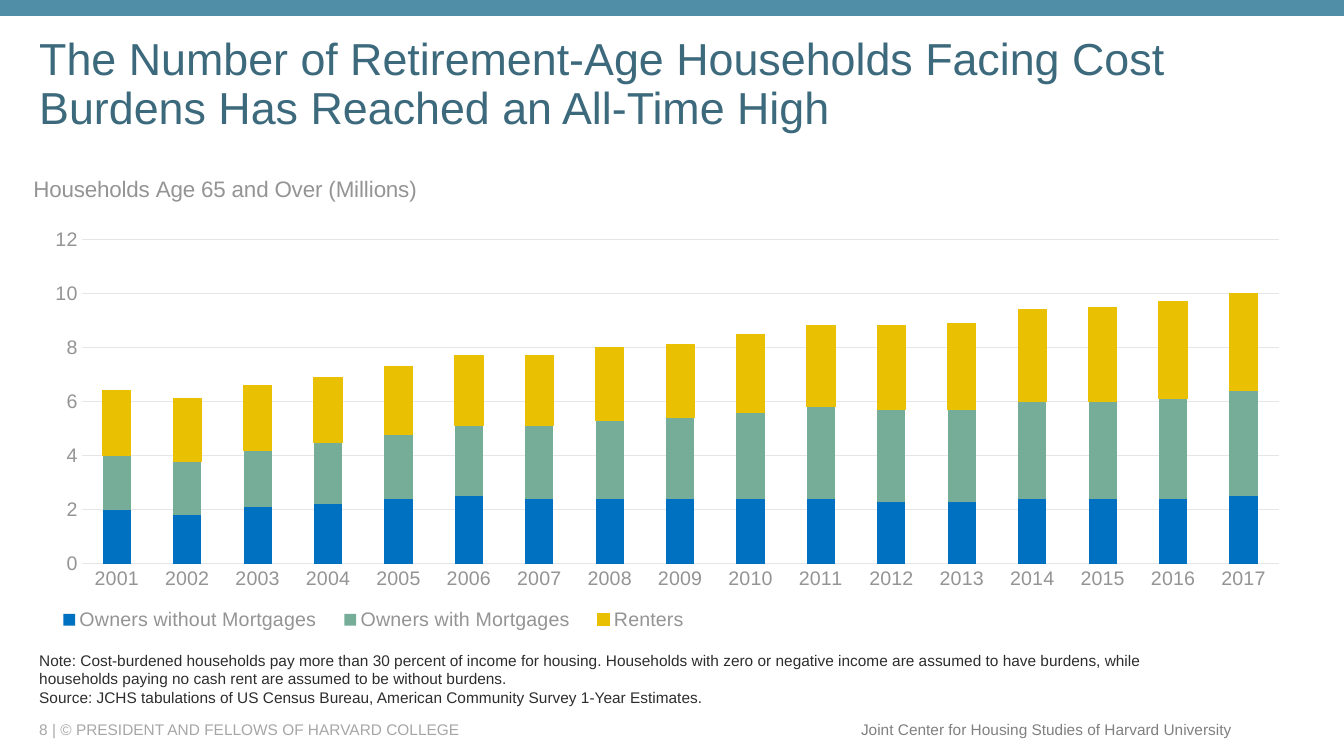
from lxml import etree
from pptx import Presentation
from pptx.chart.data import CategoryChartData
from pptx.dml.color import RGBColor
from pptx.enum.chart import XL_CHART_TYPE as ChartType, XL_LEGEND_POSITION as LegendPosition
from pptx.enum.chart import XL_TICK_MARK as TickMark
from pptx.enum.shapes import MSO_SHAPE as Shape
from pptx.enum.text import MSO_ANCHOR as Anchor, PP_ALIGN as Align
from pptx.oxml.ns import qn
from pptx.util import Cm, Pt

FONT = "Arial"
COLORS = {
    "bar": "508DA6", "title": "3C6A7C", "note": "2D2D2D",
    "copyright": "A6A6A6", "center": "808080",
    "axis": "949494", "grid": "E6E6E6",
    "without": "0070C0", "with": "76AD99", "renters": "E9C002",
}
YEARS = [str(year) for year in range(2001, 2018)]
SERIES = [
    ("Owners without Mortgages", "without",
     [2, 1.8, 2.1, 2.2, 2.4, 2.5, 2.4, 2.4, 2.4, 2.4, 2.4, 2.3, 2.3, 2.4, 2.4, 2.4, 2.5]),
    ("Owners with Mortgages", "with",
     [2, 2, 2.1, 2.3, 2.4, 2.6, 2.7, 2.9, 3, 3.2, 3.4, 3.4, 3.4, 3.6, 3.6, 3.7, 3.9]),
    ("Renters", "renters",
     [2.4, 2.3, 2.4, 2.4, 2.5, 2.6, 2.6, 2.7, 2.7, 2.9, 3, 3.1, 3.2, 3.4, 3.5, 3.6, 3.6]),
]
NOTES = [
    "Note: Cost-burdened households pay more than 30 percent of income for housing. "
    "Households with zero or negative income are assumed to have burdens, while "
    "households paying no cash rent are assumed to be without burdens.",
    "Source: JCHS tabulations of US Census Bureau, American Community Survey 1-Year Estimates.",
]


def color(name):
    """Return the named colour."""
    return RGBColor.from_string(COLORS[name])


def style_font(font, size, color_name):
    """Set typeface, size and colour of a font."""
    font.name, font.size, font.bold = FONT, Pt(size), False
    font.color.rgb = color(color_name)


def add_text(slide, box, lines, size, color_name, anchor, align=Align.LEFT, spacing=1.0):
    """Add a wrapped text box with one paragraph per line."""
    frame = slide.shapes.add_textbox(*map(Cm, box)).text_frame
    frame.word_wrap = True
    frame.vertical_anchor = anchor
    frame.text = "\n".join(lines)
    for paragraph in frame.paragraphs:
        paragraph.alignment = align
        paragraph.line_spacing = spacing
        style_font(paragraph.font, size, color_name)


def add_top_bar(slide, box):
    """Add the coloured band along the top edge."""
    shape = slide.shapes.add_shape(Shape.RECTANGLE, *map(Cm, box))
    shape.shadow.inherit = False
    shape.fill.solid()
    shape.fill.fore_color.rgb = color("bar")
    shape.line.fill.background()


def add_footer(slide, box):
    """Add the copyright line on the left and the center name on the right."""
    left, top, width, height = box
    half = width / 2
    add_text(slide, (left, top, half, height),
             ["8 | © PRESIDENT AND FELLOWS OF HARVARD COLLEGE"], 11, "copyright", Anchor.MIDDLE)
    add_text(slide, (left + half, top, half, height),
             ["Joint Center for Housing Studies of Harvard University"],
             11, "center", Anchor.MIDDLE, Align.RIGHT)


def set_layout(element, index, target=None, **fractions):
    """Give a chart part a manual layout in fractions of the chart."""
    for old in element.findall(qn("c:layout")):
        element.remove(old)
    layout = etree.Element(qn("c:layout"))
    manual = etree.SubElement(layout, qn("c:manualLayout"))
    settings = {"layoutTarget": target} if target else {}
    settings.update(xMode="edge", yMode="edge", **fractions)
    for tag, value in settings.items():
        etree.SubElement(manual, qn(f"c:{tag}")).set("val", str(value))
    element.insert(index, layout)


def style_axes(chart):
    """Style the year axis, the value axis and its gridlines."""
    years, millions = chart.category_axis, chart.value_axis
    for axis in (years, millions):
        axis.major_tick_mark = axis.minor_tick_mark = TickMark.NONE
        style_font(axis.tick_labels.font, 14, "axis")
    millions.minimum_scale, millions.maximum_scale, millions.major_unit = 0, 12, 2
    millions.tick_labels.number_format = "#,##0"
    millions.tick_labels.number_format_is_linked = False
    millions.format.line.fill.background()
    for line in (years.format.line, millions.major_gridlines.format.line):
        line.color.rgb = color("grid")
        line.width = Pt(0.75)


def add_burden_chart(slide, box):
    """Add the stacked columns of cost-burdened households by tenure."""
    data = CategoryChartData()
    data.categories = YEARS
    for name, _, values in SERIES:
        data.add_series(name, values)
    chart = slide.shapes.add_chart(ChartType.COLUMN_STACKED, *map(Cm, box), data).chart
    style_font(chart.font, 14, "axis")
    style_axes(chart)

    plot = chart.plots[0]
    plot.gap_width, plot.overlap, plot.vary_by_categories = 150, 100, False
    for series, (_, color_name, _) in zip(plot.series, SERIES):
        series.format.fill.solid()
        series.format.fill.fore_color.rgb = color(color_name)
    renters_line = plot.series[-1].format.line
    renters_line.color.rgb = color("renters")
    renters_line.width = Pt(0.75)

    chart.has_title = True
    title = chart.chart_title
    title.text_frame.text = "Households Age 65 and Over (Millions)"
    style_font(title.text_frame.paragraphs[0].font, 16, "axis")
    title.include_in_layout = False

    chart.has_legend = True
    legend = chart.legend
    legend.position = LegendPosition.BOTTOM
    legend.include_in_layout = False
    style_font(legend.font, 14, "axis")

    set_layout(title._element, 1, x=0, y=0.01)
    set_layout(legend._element, 1, x=0.01, y=0.93, w=0.52, h=0.07)
    plot_area = chart._chartSpace.chart.plotArea
    set_layout(plot_area, 0, "inner", x=0.041, y=0.156, w=0.939, h=0.69)


def main():
    """Build the slide and save it."""
    presentation = Presentation()
    presentation.slide_width, presentation.slide_height = Cm(33.87), Cm(19.05)
    slide = presentation.slides.add_slide(presentation.slide_layouts[6])
    add_top_bar(slide, (0, 0, 33.87, 0.4))
    add_text(slide, (0.74, 1.6, 32.13, 1.9),
             ["The Number of Retirement-Age Households Facing Cost Burdens "
              "Has Reached an All-Time High"], 32, "title", Anchor.BOTTOM, spacing=0.9)
    add_burden_chart(slide, (0.74, 4.19, 32.13, 11.84))
    add_text(slide, (0.74, 16.46, 29.85, 1.47), NOTES, 11, "note", Anchor.BOTTOM)
    add_footer(slide, (0.74, 18.01, 30.56, 0.74))
    presentation.save("out.pptx")


if __name__ == "__main__":
    main()
